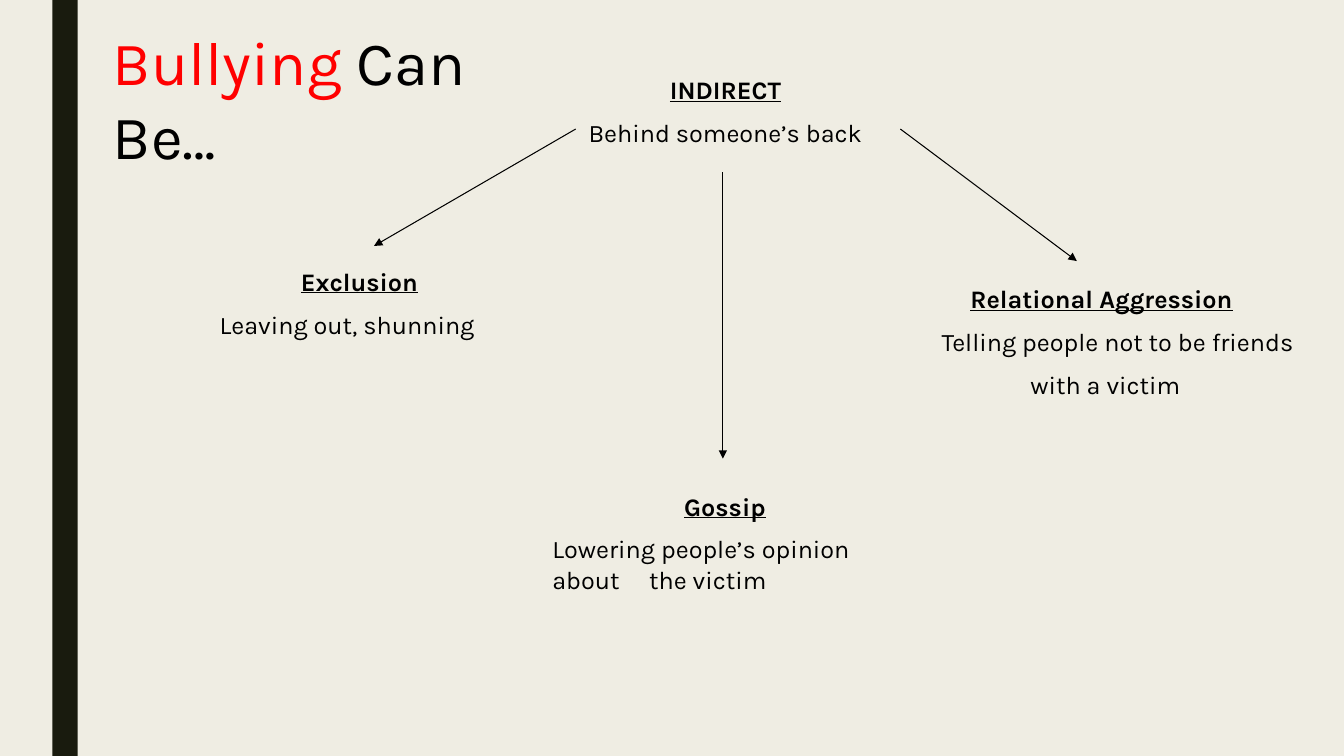
from lxml import etree
from pptx import Presentation
from pptx import util as u
from pptx.dml import color
from pptx.enum import shapes, text
from pptx.oxml import ns

INK = {"paper": "EFEDE3", "bar": "191B0E", "text": "000000", "key": "FF0000"}
FRAME = {"word_wrap": True, "auto_size": text.MSO_AUTO_SIZE.NONE,
         "vertical_anchor": text.MSO_ANCHOR.TOP}
PLAIN = {"name": "Karla", "size": u.Pt(18), "bold": False, "underline": False}
HEAD = {**PLAIN, "bold": True, "underline": True}
TITLE = {**PLAIN, "size": u.Pt(44)}

# Heading, box, lines with their left indent (and tab stop, if any)
NODES = [
    ("INDIRECT", (3.86, 0.69, 6.67, 0.86),
     [("Behind someone’s back", 1.88, None)]),
    ("Exclusion", (0.85, 2.59, 5.43, 0.86),
     [("Leaving out, shunning", 1.23, None)]),
    ("Relational Aggression", (8.42, 2.76, 5.01, 1.31),
     [("Telling people not to be friends", 0.82, None),
      ("with a victim", 1.7, None)]),
    ("Gossip", (5.38, 4.82, 3.62, 1.15),
     [("Lowering people’s opinion about\tthe victim", 0, 0.96)]),
]
ARROWS = [(5.71, 1.28, 3.71, 2.44), (8.93, 1.28, 10.68, 2.59),
          (7.17, 1.71, 7.17, 4.55)]


def rgb(name):
    return color.RGBColor.from_string(INK[name])


def inches(box):
    return [u.Inches(n) for n in box]


def style(item, form):
    for key, value in form.items():
        setattr(item, key, value)


def add_run(para, words, form, ink="text"):
    run = para.add_run()
    run.text = words
    style(run.font, form)
    run.font.color.rgb = rgb(ink)


def add_bar(slide, box):
    bar = slide.shapes.add_shape(shapes.MSO_SHAPE.RECTANGLE, *inches(box))
    bar.shadow.inherit = False
    bar.fill.solid()
    bar.fill.fore_color.rgb = rgb("bar")
    bar.line.fill.background()


def add_title(slide, box):
    title = slide.shapes.title
    style(title, dict(zip(("left", "top", "width", "height"), inches(box))))
    style(title.text_frame, FRAME)
    para = title.text_frame.paragraphs[0]
    para.alignment = text.PP_ALIGN.LEFT
    add_run(para, "Bullying", TITLE, "key")
    add_run(para, " Can Be…", TITLE)


def add_node(slide, head, box, lines):
    frame = slide.shapes.add_textbox(*inches(box)).text_frame
    style(frame, FRAME)
    para = frame.paragraphs[0]
    para.alignment = text.PP_ALIGN.CENTER
    add_run(para, head, HEAD)
    for words, indent, stop in lines:
        para = frame.add_paragraph()
        para.space_before = u.Pt(9)
        props = para._p.get_or_add_pPr()
        props.set("marL", str(u.Inches(indent)))
        if stop:
            tabs = etree.SubElement(props, ns.qn("a:tabLst"))
            etree.SubElement(tabs, ns.qn("a:tab"),
                             pos=str(u.Inches(stop)), algn="l")
        add_run(para, words, PLAIN)


def add_arrow(slide, ends):
    arrow = slide.shapes.add_connector(shapes.MSO_CONNECTOR.STRAIGHT,
                                       *inches(ends))
    arrow.line.color.rgb = rgb("text")
    arrow.line.width = u.Pt(0.75)
    etree.SubElement(arrow.line._get_or_add_ln(), ns.qn("a:tailEnd"),
                     type="triangle")
    etree.SubElement(arrow._element.spPr, ns.qn("a:effectLst"))


def main():
    deck = Presentation()
    deck.slide_width, deck.slide_height = inches((13.33, 7.5))
    slide = deck.slides.add_slide(deck.slide_layouts[5])
    slide.background.fill.solid()
    slide.background.fill.fore_color.rgb = rgb("paper")

    # Side bar and title
    add_bar(slide, (0.52, 0, 0.25, 7.5))
    add_title(slide, (1.02, 0.19, 4.69, 1.14))

    # Diagram: texts and the arrows between them
    for node in NODES:
        add_node(slide, *node)
    for ends in ARROWS:
        add_arrow(slide, ends)

    deck.save("out.pptx")


if __name__ == "__main__":
    main()
